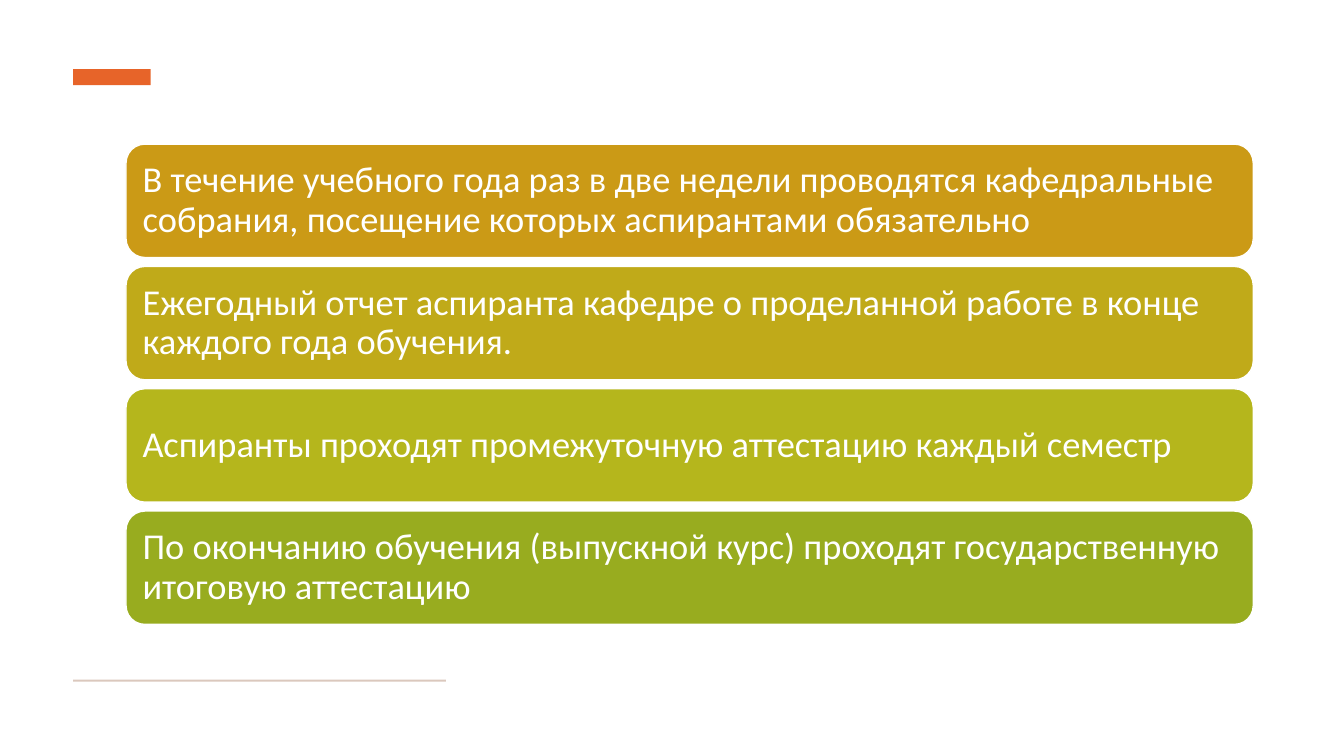
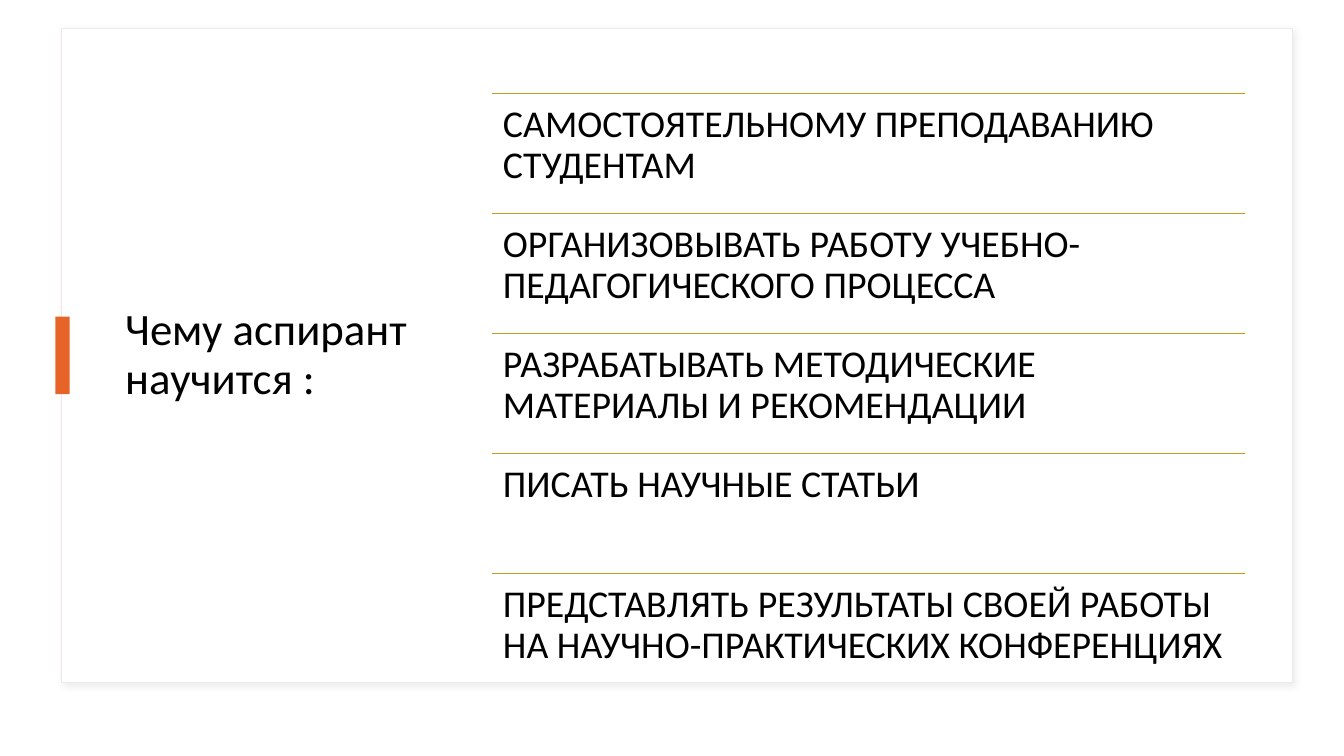
from lxml import etree
from pptx import Presentation
from pptx.dml.color import RGBColor
from pptx.enum.shapes import MSO_CONNECTOR, MSO_SHAPE
from pptx.enum.text import MSO_ANCHOR, MSO_AUTO_SIZE, PP_ALIGN
from pptx.oxml.ns import qn
from pptx.util import Inches, Pt

RECT, ROUND = MSO_SHAPE.RECTANGLE, MSO_SHAPE.ROUNDED_RECTANGLE
STRAIGHT = MSO_CONNECTOR.STRAIGHT
TOP, MIDDLE = MSO_ANCHOR.TOP, MSO_ANCHOR.MIDDLE
LEFT, NO_FIT = PP_ALIGN.LEFT, MSO_AUTO_SIZE.NONE

COLS, ROWS = 160, 90
TITLE_ONLY, BLANK = 5, 6
FONT = "Calibri"
COLORS = {
    "white": "FFFFFF",
    "text": "000000",
    "accent": "E76429",
    "rule": "DBC8BD",
    "border": "F0E9E5",
    "shadow": "BCC5CA",
    "gold": "CB9A16",
    "mustard": "C0AA19",
    "lime": "B5B61C",
    "green": "98AC1F",
}

RULES = [
    ("gold", "В течение учебного года раз в две недели проводятся кафедральные "
             "собрания, посещение которых аспирантами обязательно"),
    ("mustard", "Ежегодный отчет аспиранта кафедре о проделанной работе в конце "
                "каждого года обучения."),
    ("lime", "Аспиранты проходят промежуточную аттестацию каждый семестр"),
    ("green", "По окончанию обучения (выпускной курс) проходят государственную "
              "итоговую аттестацию"),
]
SKILLS = [
    "САМОСТОЯТЕЛЬНОМУ ПРЕПОДАВАНИЮ СТУДЕНТАМ",
    "ОРГАНИЗОВЫВАТЬ РАБОТУ УЧЕБНО-ПЕДАГОГИЧЕСКОГО ПРОЦЕССА",
    "РАЗРАБАТЫВАТЬ МЕТОДИЧЕСКИЕ МАТЕРИАЛЫ И РЕКОМЕНДАЦИИ",
    "ПИСАТЬ НАУЧНЫЕ СТАТЬИ",
    "ПРЕДСТАВЛЯТЬ РЕЗУЛЬТАТЫ СВОЕЙ РАБОТЫ НА НАУЧНО-ПРАКТИЧЕСКИХ КОНФЕРЕНЦИЯХ",
]


class Deck:
    """Holds the shared style and the current slide, measured in grid cells."""

    def __init__(self):
        self.prs = Presentation()
        self.prs.slide_width = Inches(13.33)
        self.prs.slide_height = Inches(7.5)
        self.s = None

    def new_slide(self, layout):
        self.s = self.prs.slides.add_slide(self.prs.slide_layouts[layout])

    def box(self, x, y, w, h):
        col, row = self.prs.slide_width / COLS, self.prs.slide_height / ROWS
        return int(x * col), int(y * row), int(w * col), int(h * row)

    def color(self, name):
        return RGBColor.from_string(COLORS[name])

    def set_text(self, sp, text, size, color, anchor, inset):
        tf = sp.text_frame
        tf.word_wrap = True
        tf.auto_size = NO_FIT
        tf.vertical_anchor = anchor
        tf.margin_left = tf.margin_right = Inches(inset)
        tf.margin_top = tf.margin_bottom = Inches(inset)
        p = tf.paragraphs[0]
        p.alignment = LEFT
        p.line_spacing = 0.9
        r = p.add_run()
        r.text = text
        r.font.name = FONT
        r.font.size = Pt(size)
        r.font.color.rgb = self.color(color)

    def shape(self, kind, fill, x, y, w, h, line=None):
        sp = self.s.shapes.add_shape(kind, *self.box(x, y, w, h))
        sp.shadow.inherit = False
        sp.fill.solid()
        sp.fill.fore_color.rgb = self.color(fill)
        if line:
            sp.line.color.rgb = self.color(line)
            sp.line.width = Pt(1)
        else:
            sp.line.fill.background()
        return sp

    def bar(self, fill, x, y, w, h):
        return self.shape(RECT, fill, x, y, w, h)

    def card(self, fill, text, x, y, w, h):
        sp = self.shape(ROUND, fill, x, y, w, h, "white")
        self.set_text(sp, text, 26, "white", MIDDLE, 0.11)

    def panel(self, x, y, w, h):
        sp = self.shape(RECT, "white", x, y, w, h, "border")
        effects = sp.element.spPr.find(qn("a:effectLst"))
        shadow = etree.SubElement(effects, qn("a:outerShdw"), blurRad=str(Pt(4)),
                                  dist=str(Pt(3)), dir=str(45 * 60000))
        tint = etree.SubElement(shadow, qn("a:srgbClr"), val=COLORS["shadow"])
        etree.SubElement(tint, qn("a:alpha"), val="30000")

    def title(self, text, x, y, w, h):
        sp = self.s.shapes.title
        sp.left, sp.top, sp.width, sp.height = self.box(x, y, w, h)
        self.set_text(sp, text, 32, "text", MIDDLE, 0.1)
        sp.element.getparent().append(sp.element)

    def ruled_item(self, text, x, y, w, h):
        left, top, width, height = self.box(x, y, w, h)
        line = self.s.shapes.add_connector(STRAIGHT, left, top, left + width, top)
        line.line.color.rgb = self.color("gold")
        line.line.width = Pt(1)
        etree.SubElement(line.element.spPr, qn("a:effectLst"))
        sp = self.s.shapes.add_textbox(left, top, width, height)
        self.set_text(sp, text, 27, "text", TOP, 0.11)


def rules_slide(deck):
    deck.new_slide(BLANK)
    deck.bar("accent", 8.7, 8.22, 9.24, 1.92)
    deck.bar("rule", 8.7, 80.9, 44.4, 0.24)
    for i, (fill, text) in enumerate(RULES):
        deck.card(fill, text, 15, 17.16 + 14.56 * i, 134.2, 13.5)


def skills_slide(deck):
    deck.new_slide(TITLE_ONLY)
    deck.panel(7.35, 3.36, 146.5, 77.9)
    deck.title("Чему аспирант научится :", 13.7, 6.6, 39.2, 71.4)
    deck.bar("accent", 6.6, 37.7, 1.7, 9.24)
    for i, text in enumerate(SKILLS):
        deck.ruled_item(text, 58.56, 11.16 + 14.28 * i, 89.64, 14.28)


def main():
    deck = Deck()
    rules_slide(deck)
    skills_slide(deck)
    deck.prs.save("out.pptx")


if __name__ == "__main__":
    main()
